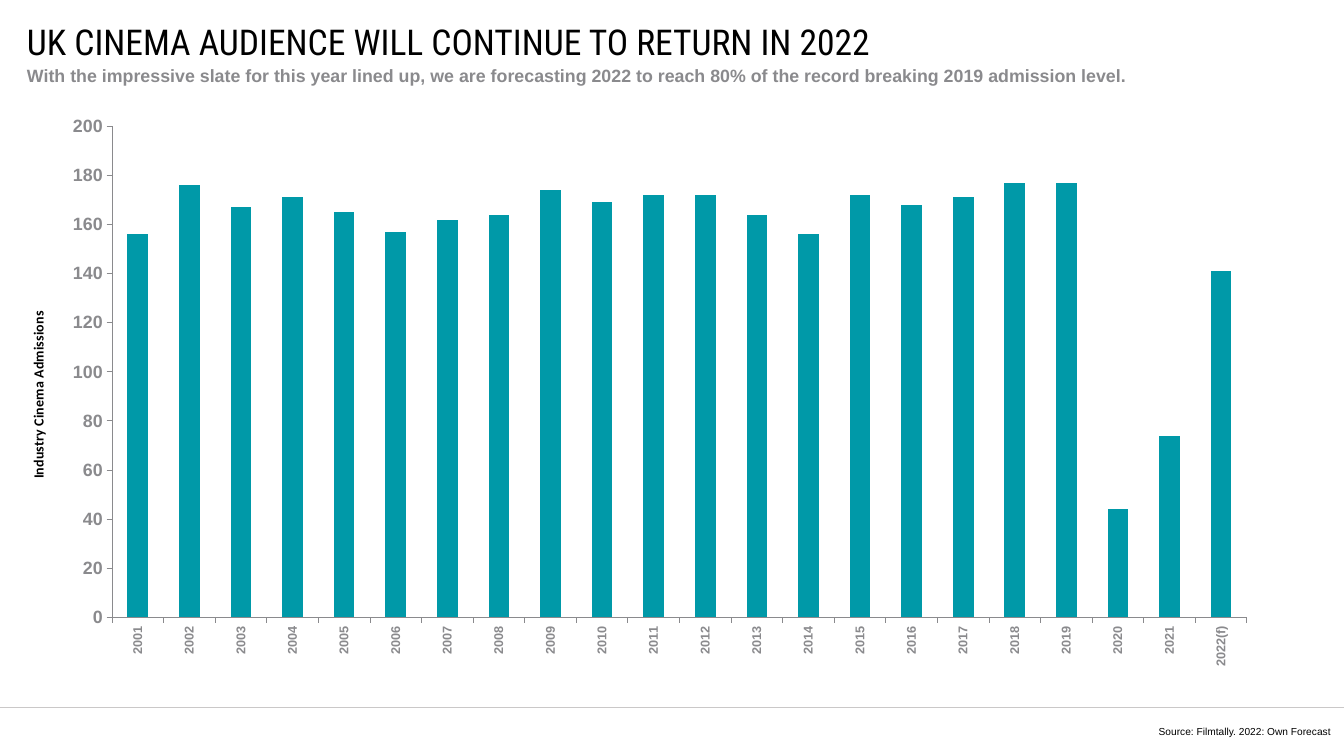
from lxml import etree
from pptx import Presentation
from pptx import util as u
from pptx.chart.data import CategoryChartData
from pptx.dml.color import RGBColor
from pptx.enum import chart as ch, shapes, text
from pptx.oxml.ns import qn

PX = 10000  # EMU per px
BLACK = RGBColor(0x00, 0x00, 0x00)
GREY = RGBColor(0x8A, 0x8A, 0x8D)
RULE_GREY = RGBColor(0xCA, 0xC8, 0xC8)
TEAL = RGBColor(0x00, 0x99, 0xA8)

YEARS = [str(year) for year in range(2001, 2022)] + ["2022(f)"]
ADMISSIONS = [156, 176, 167, 171, 165, 157, 162, 164, 174, 169, 172,
              172, 164, 156, 172, 168, 171, 177, 177, 44, 74, 141]


def set_font(font, size, color, bold=False, name="Arial"):
    font.name, font.size, font.bold = name, u.Pt(size), bold
    font.color.rgb = color


def set_layout(parent, index, **settings):
    """Give a chart part a manual layout."""
    for old in parent.findall(qn("c:layout")):
        parent.remove(old)
    layout = etree.Element(qn("c:layout"))
    manual = etree.SubElement(layout, qn("c:manualLayout"))
    for tag, value in settings.items():
        etree.SubElement(manual, qn("c:" + tag)).set("val", str(value))
    parent.insert(index, layout)


def turn_upright(element):
    """Turn the text of a chart part to read from bottom to top."""
    body = next(element.iter(qn("a:bodyPr")))
    body.set("rot", "-5400000")
    body.set("vert", "horz")


class Deck:
    def __init__(self, width, height):
        self.prs = Presentation()
        self.prs.slide_width, self.prs.slide_height = width * PX, height * PX
        self.slide = self.prs.slides.add_slide(self.prs.slide_layouts[6])

    def rule(self, x1, y1, x2, y2):
        rule = self.slide.shapes.add_connector(
            shapes.MSO_CONNECTOR.STRAIGHT, x1 * PX, y1 * PX, x2 * PX, y2 * PX)
        rule.line.color.rgb, rule.line.width = RULE_GREY, u.Pt(0.5)
        etree.SubElement(rule._element.spPr, qn("a:effectLst"))

    def label(self, box, words, size, color, bold=False, name="Arial",
              align=text.PP_ALIGN.LEFT, anchor=text.MSO_ANCHOR.MIDDLE):
        frame = self.slide.shapes.add_textbox(*(n * PX for n in box)).text_frame
        frame.word_wrap = True
        frame.vertical_anchor = anchor
        frame.margin_left = frame.margin_right = 0
        frame.margin_top = frame.margin_bottom = 0
        frame.text = words
        line = frame.paragraphs[0]
        line.alignment = align
        set_font(line.runs[0].font, size, color, bold, name)

    def columns(self, box, years, admissions, axis_title):
        data = CategoryChartData(number_format="0")
        data.categories = years
        data.add_series("Series 1", admissions)
        chart = self.slide.shapes.add_chart(
            ch.XL_CHART_TYPE.COLUMN_CLUSTERED, *(n * PX for n in box), data).chart
        chart.has_legend = chart.has_title = False
        set_font(chart.font, 9.4, BLACK, True, "Calibri")

        # Columns
        plot = chart.plots[0]
        plot.gap_width, plot.vary_by_categories = 150, False
        fill = plot.series[0].format.fill
        fill.solid()
        fill.fore_color.rgb = TEAL
        set_layout(chart._chartSpace.chart.plotArea, 0, layoutTarget="inner",
                   xMode="edge", yMode="edge", x=0.082, y=0.059, w=0.886, h=0.757)

        # Axes
        year_axis, admission_axis = chart.category_axis, chart.value_axis
        for axis, size in ((year_axis, 10), (admission_axis, 14)):
            axis.has_major_gridlines = False
            axis.major_tick_mark = ch.XL_TICK_MARK.OUTSIDE
            axis.minor_tick_mark = ch.XL_TICK_MARK.NONE
            axis.format.line.color.rgb = GREY
            axis.format.line.width = u.Pt(0.75)
            set_font(axis.tick_labels.font, size, GREY, True)
        turn_upright(year_axis._element.find(qn("c:txPr")))
        admission_axis.minimum_scale, admission_axis.maximum_scale = 0, 200
        admission_axis.major_unit = 20

        # Value axis title
        title = admission_axis.axis_title
        title.text_frame.text = axis_title
        set_font(title.text_frame.paragraphs[0].runs[0].font, 11, BLACK, True, "Calibri")
        turn_upright(title._element)
        set_layout(title._element, 1, xMode="edge", yMode="edge", x=0.015, y=0.34)


def main():
    deck = Deck(1344, 756)

    # Footer rule
    deck.rule(0, 707, 1344, 707)

    # Heading
    deck.label((27, 27, 1242, 29), "UK CINEMA AUDIENCE WILL CONTINUE TO RETURN IN 2022",
               28, BLACK, name="Roboto Condensed")

    # Admissions by year
    deck.columns((7, 88, 1281, 649), YEARS, ADMISSIONS, "Industry Cinema Admissions")

    # Source
    deck.label((1020, 725, 311, 12), "Source: Filmtally. 2022: Own Forecast",
               8, BLACK, align=text.PP_ALIGN.RIGHT)

    # Subheading
    deck.label((27, 65, 1224, 34),
               "With the impressive slate for this year lined up, we are forecasting 2022 "
               "to reach 80% of the record breaking 2019 admission level.",
               14, GREY, bold=True, anchor=text.MSO_ANCHOR.TOP)

    deck.prs.save("out.pptx")


if __name__ == "__main__":
    main()
